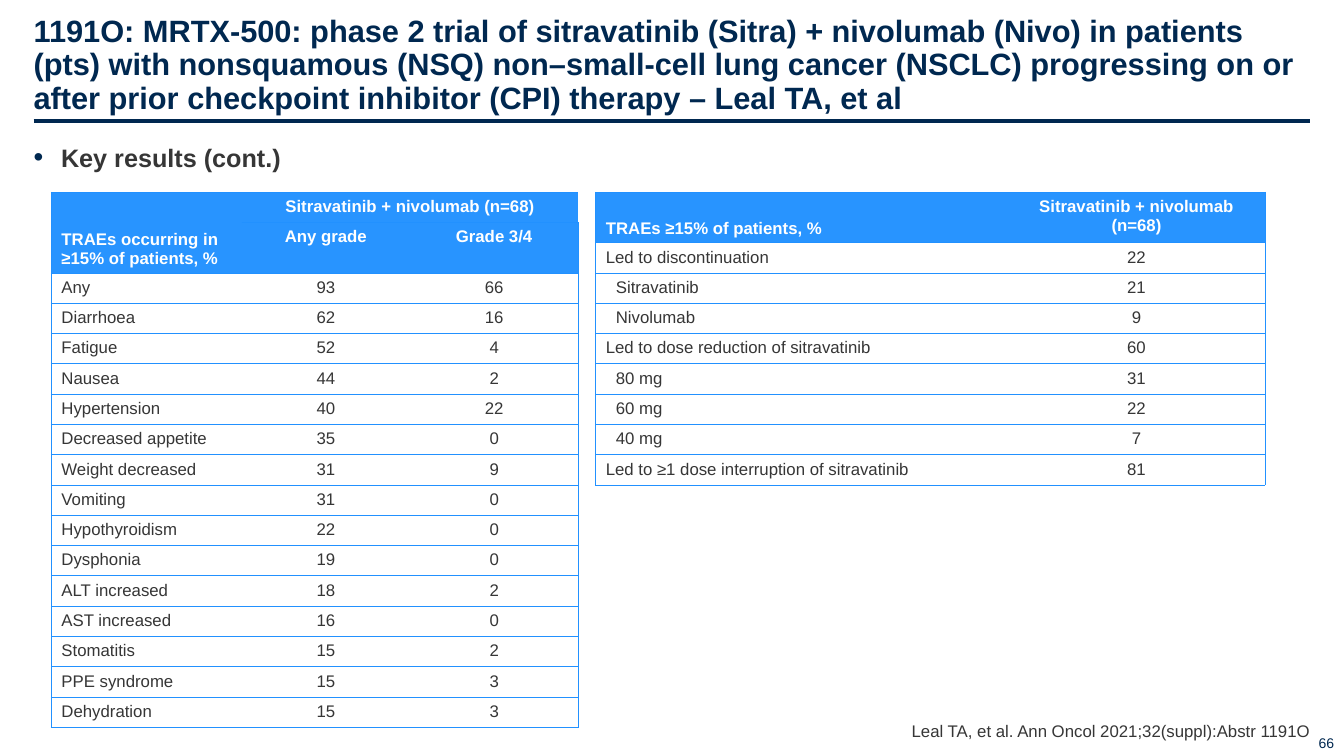
from lxml.etree import SubElement
from pptx import Presentation
from pptx.dml.color import RGBColor
from pptx.enum.shapes import MSO_CONNECTOR
from pptx.enum.text import MSO_ANCHOR, PP_ALIGN
from pptx.oxml.ns import qn
from pptx.util import Pt

COLORS = {"navy": "002850", "text": "363636", "header": "2894FF", "grid": "2291FF", "white": "FFFFFF"}
FONT = "Arial"
TABLE_TOP = 137.4
INDENT = 14.4

TITLE = (
    "1191O: MRTX-500: phase 2 trial of sitravatinib (Sitra) + nivolumab (Nivo) in patients "
    "(pts) with nonsquamous (NSQ) non–small-cell lung cancer (NSCLC) progressing on or after "
    "prior checkpoint inhibitor (CPI) therapy – Leal TA, et al"
)
EVENT_HEADERS = [
    ("TRAEs occurring in ≥15% of patients, %", "Sitravatinib + nivolumab (n=68)", ""),
    ("", "Any grade", "Grade 3/4"),
]
EVENTS = [
    ("Any", 93, 66),
    ("Diarrhoea", 62, 16),
    ("Fatigue", 52, 4),
    ("Nausea", 44, 2),
    ("Hypertension", 40, 22),
    ("Decreased appetite", 35, 0),
    ("Weight decreased", 31, 9),
    ("Vomiting", 31, 0),
    ("Hypothyroidism", 22, 0),
    ("Dysphonia", 19, 0),
    ("ALT increased", 18, 2),
    ("AST increased", 16, 0),
    ("Stomatitis", 15, 2),
    ("PPE syndrome", 15, 3),
    ("Dehydration", 15, 3),
]
OUTCOME_HEADERS = [("TRAEs ≥15% of patients, %", "Sitravatinib + nivolumab (n=68)")]
OUTCOMES = [
    ("Led to discontinuation", 22),
    ("Sitravatinib", 21),
    ("Nivolumab", 9),
    ("Led to dose reduction of sitravatinib", 60),
    ("80 mg", 31),
    ("60 mg", 22),
    ("40 mg", 7),
    ("Led to ≥1 dose interruption of sitravatinib", 81),
]


def rgb(name):
    return RGBColor.from_string(COLORS[name])


def add_run(paragraph, text, size, color, bold=False):
    run = paragraph.add_run()
    run.text = text
    run.font.name = FONT
    run.font.size = Pt(size)
    run.font.bold = bold
    run.font.color.rgb = rgb(color)


def add_text(slide, box, text, size, color, bold=False, align=PP_ALIGN.LEFT,
             anchor=MSO_ANCHOR.TOP, insets=(0, 0, 0, 0)):
    """Add a one-paragraph text box and return the paragraph; insets run left, top, right, bottom."""
    frame = slide.shapes.add_textbox(*map(Pt, box)).text_frame
    frame.word_wrap = True
    frame.vertical_anchor = anchor
    frame.margin_left, frame.margin_top, frame.margin_right, frame.margin_bottom = map(Pt, insets)
    paragraph = frame.paragraphs[0]
    paragraph.alignment = align
    add_run(paragraph, text, size, color, bold)
    return paragraph


def add_bullet(paragraph, indent):
    properties = paragraph._p.get_or_add_pPr()
    properties.set("marL", str(Pt(indent)))
    properties.set("indent", str(-Pt(indent)))
    bullet_color = SubElement(properties, qn("a:buClr"))
    SubElement(bullet_color, qn("a:srgbClr"), val=COLORS["navy"])
    SubElement(properties, qn("a:buSzPct"), val="110000")
    SubElement(properties, qn("a:buFont"), typeface=FONT)
    SubElement(properties, qn("a:buChar"), char="•")


def add_rule(slide, left, right, top):
    rule = slide.shapes.add_connector(MSO_CONNECTOR.STRAIGHT, Pt(left), Pt(top), Pt(right), Pt(top))
    rule.line.color.rgb = rgb("navy")
    rule.line.width = Pt(2.25)
    SubElement(rule._element.spPr, qn("a:effectLst"))


def set_borders(cell, drawn_sides):
    """Draw the listed sides (of L, R, T, B) and clear the others."""
    properties = cell._tc.get_or_add_tcPr()
    for side in "LRTB":
        line = SubElement(properties, qn(f"a:ln{side}"), w=str(Pt(0.75)))
        if side in drawn_sides:
            fill = SubElement(line, qn("a:solidFill"))
            SubElement(fill, qn("a:srgbClr"), val=COLORS["grid"])
        else:
            SubElement(line, qn("a:noFill"))


def add_results_table(slide, left, widths, headers, header_heights, body, body_height,
                      merges=(), indented=()):
    rows = headers + body
    heights = header_heights + [body_height] * len(body)
    table = slide.shapes.add_table(
        len(rows), len(widths), Pt(left), Pt(TABLE_TOP), Pt(sum(widths)), Pt(sum(heights))
    ).table
    table.first_row = table.horz_banding = False
    for column, width in zip(table.columns, widths):
        column.width = Pt(width)
    for row, height in zip(table.rows, heights):
        row.height = Pt(height)
    for first, last in merges:
        table.cell(*first).merge(table.cell(*last))

    for row_index, values in enumerate(rows):
        is_header = row_index < len(headers)
        for column_index, value in enumerate(values):
            cell = table.cell(row_index, column_index)
            sides = "TB"
            if column_index == 0:
                sides += "L"
            if column_index == len(widths) - 1:
                sides += "R"
            set_borders(cell, sides)
            cell.fill.solid()
            cell.fill.fore_color.rgb = rgb("header" if is_header else "white")
            if cell.is_spanned:
                continue
            paragraph = cell.text_frame.paragraphs[0]
            if column_index > 0:
                paragraph.alignment = PP_ALIGN.CENTER
            elif is_header:
                cell.vertical_anchor = MSO_ANCHOR.BOTTOM
            elif value in indented:
                cell.margin_left = Pt(INDENT)
            add_run(paragraph, str(value), 12, "white" if is_header else "text", is_header)


def main():
    presentation = Presentation()
    presentation.slide_width, presentation.slide_height = Pt(960), Pt(540)
    slide = presentation.slides.add_slide(presentation.slide_layouts[6])

    add_rule(slide, 24, 936, 86.4)
    add_text(slide, (913, 511.2, 47, 28.8), "66", 10, "navy", align=PP_ALIGN.RIGHT,
             anchor=MSO_ANCHOR.BOTTOM, insets=(7.2, 3.6, 7.2, 3.6))
    title = add_text(slide, (24, 8.6, 912, 74.2), TITLE, 22, "navy", bold=True,
                     anchor=MSO_ANCHOR.BOTTOM, insets=(0, 3.6, 0, 0))
    title.line_spacing = 0.9
    heading = add_text(slide, (24, 98, 912, 398), "Key results (cont.)", 18, "text", bold=True,
                       insets=(0, 3.6, 0, 3.6))
    heading.space_after = Pt(6)
    add_bullet(heading, 19.6)
    add_text(slide, (502.6, 513.4, 433.4, 15.8), "Leal TA, et al. Ann Oncol 2021;32(suppl):Abstr 1191O",
             12, "text", align=PP_ALIGN.RIGHT, anchor=MSO_ANCHOR.BOTTOM)

    add_results_table(slide, 36.7, [136, 120.2, 120.2], EVENT_HEADERS, [20.7, 34.3], EVENTS, 20.67,
                      merges=[((0, 0), (1, 0)), ((0, 1), (0, 2))])
    add_results_table(slide, 425.5, [294.5, 183.6], OUTCOME_HEADERS, [35.5], OUTCOMES, 21.17,
                      indented=("Sitravatinib", "Nivolumab", "80 mg", "60 mg", "40 mg"))
    presentation.save("out.pptx")


if __name__ == "__main__":
    main()
